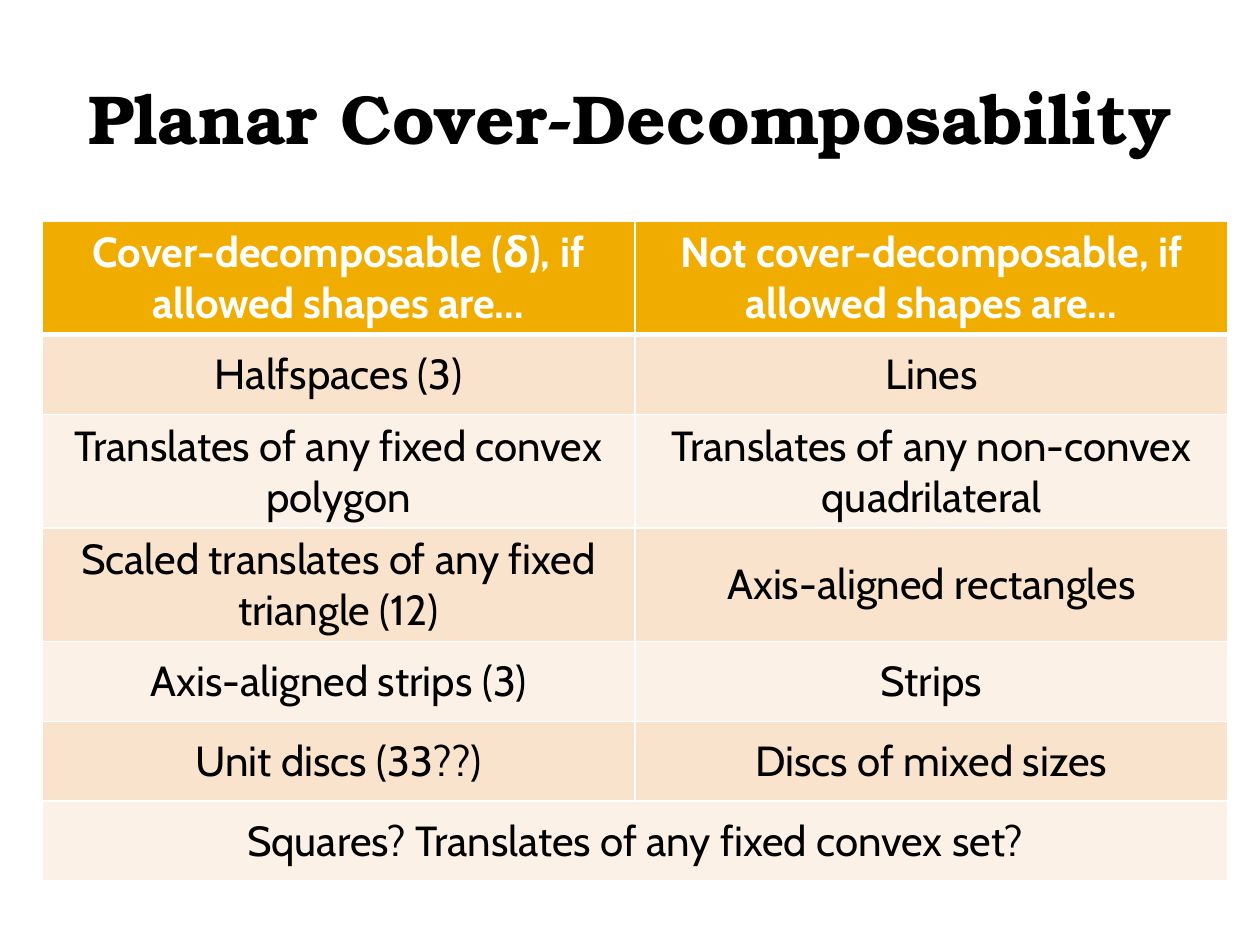
import pptx
import pptx.dml.color
import pptx.enum.text
import pptx.oxml
import pptx.oxml.ns
import pptx.util

SCALE = 914400 // 126
COLORS = {
    "black": "000000",
    "white": "FFFFFF",
    "header": "F0AD00",
    "dark_band": "F9E3CC",
    "light_band": "FCF1E7",
}
ROWS = [
    ("Cover-decomposable (δ), if allowed shapes are…",
     "Not cover-decomposable, if allowed shapes are…"),
    ("Halfspaces (3)", "Lines"),
    ("Translates of any fixed convex polygon",
     "Translates of any non-convex quadrilateral"),
    ("Scaled translates of any fixed triangle (12)", "Axis-aligned rectangles"),
    ("Axis-aligned strips (3)", "Strips"),
    ("Unit discs (33??)", "Discs of mixed sizes"),
    ("Squares? Translates of any fixed convex set?",),
]
COLUMN_WIDTH = 593
ROW_HEIGHT = 80


def px(*lengths):
    return [pptx.util.Emu(length * SCALE) for length in lengths]


def rgb(name):
    return pptx.dml.color.RGBColor.from_string(COLORS[name])


def write_text(frame, text, font, size, color, bold):
    frame.text = text
    para = frame.paragraphs[0]
    para.alignment = pptx.enum.text.PP_ALIGN.CENTER
    span = para.runs[0].font
    span.name = font
    span.size = pptx.util.Pt(size)
    span.bold = bold
    span.color.rgb = rgb(color)


def add_title(page, text):
    box = page.shapes.add_textbox(*px(63, 38, 1134, 157))
    box.text_frame.word_wrap = True
    box.text_frame.vertical_anchor = pptx.enum.text.MSO_ANCHOR.MIDDLE
    write_text(box.text_frame, text, "TeX Gyre Bonum", 39.6, "black", True)


def set_borders(cell, top, bottom):
    properties = cell._tc.get_or_add_tcPr()
    widths = {"lnL": 1, "lnR": 1, "lnT": top, "lnB": bottom}
    for index, (side, width) in enumerate(widths.items()):
        line = pptx.oxml.parse_xml(
            f'<a:{side} {pptx.oxml.ns.nsdecls("a")} w="{pptx.util.Pt(width)}">'
            f'<a:solidFill><a:srgbClr val="{COLORS["white"]}"/></a:solidFill>'
            f'</a:{side}>'
        )
        properties.insert(index, line)


def fill_cell(cell, text, row):
    header = row == 0
    band = "header" if header else "dark_band" if row % 2 else "light_band"
    cell.fill.solid()
    cell.fill.fore_color.rgb = rgb(band)
    cell.vertical_anchor = pptx.enum.text.MSO_ANCHOR.MIDDLE
    set_borders(cell, 3 if row == 1 else 1, 3 if header else 1)
    write_text(cell.text_frame, text, "Cabin", 24,
               "white" if header else "black", header)


def add_shapes_table(page):
    frame = page.shapes.add_table(
        len(ROWS), 2, *px(42, 221, 2 * COLUMN_WIDTH, len(ROWS) * ROW_HEIGHT))
    table = frame.table
    for row, texts in enumerate(ROWS):
        if len(texts) == 1:
            table.cell(row, 0).merge(table.cell(row, 1))
        for column, text in enumerate(texts):
            fill_cell(table.cell(row, column), text, row)


def main():
    deck = pptx.Presentation()
    deck.slide_width, deck.slide_height = pptx.util.Inches(10), pptx.util.Inches(7.5)
    page = deck.slides.add_slide(deck.slide_layouts[6])
    add_title(page, "Planar Cover-Decomposability")
    add_shapes_table(page)
    deck.save("out.pptx")


if __name__ == "__main__":
    main()
